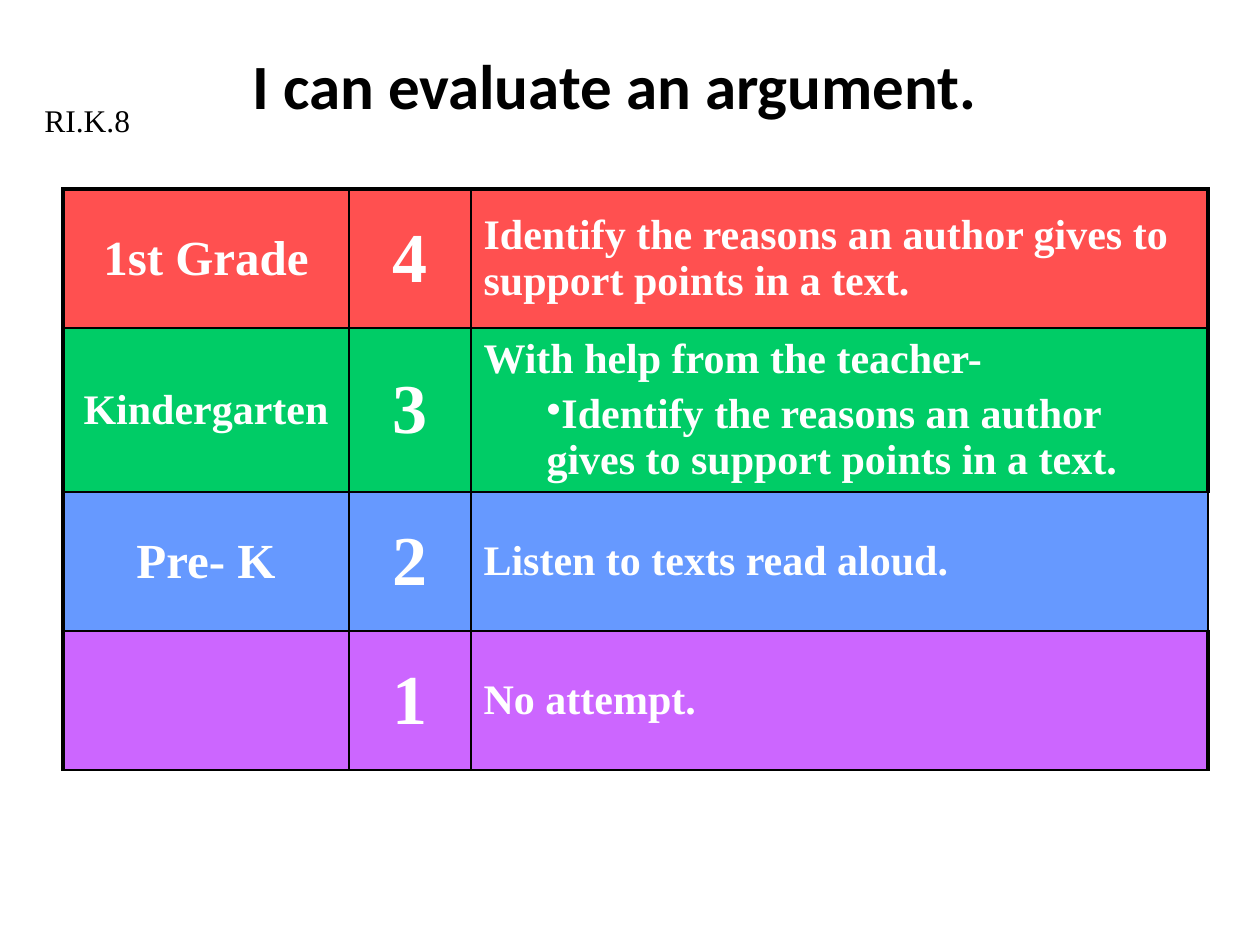
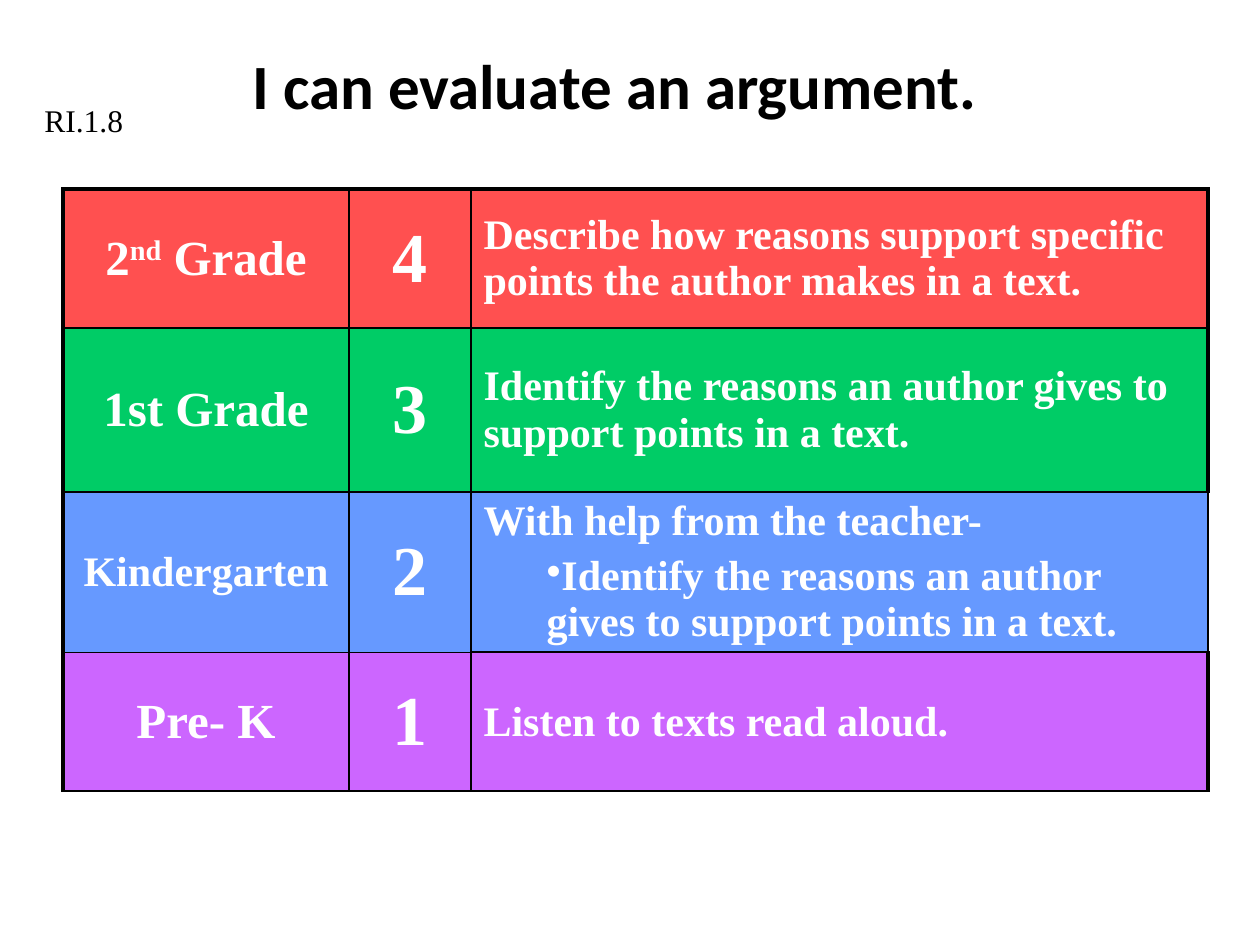
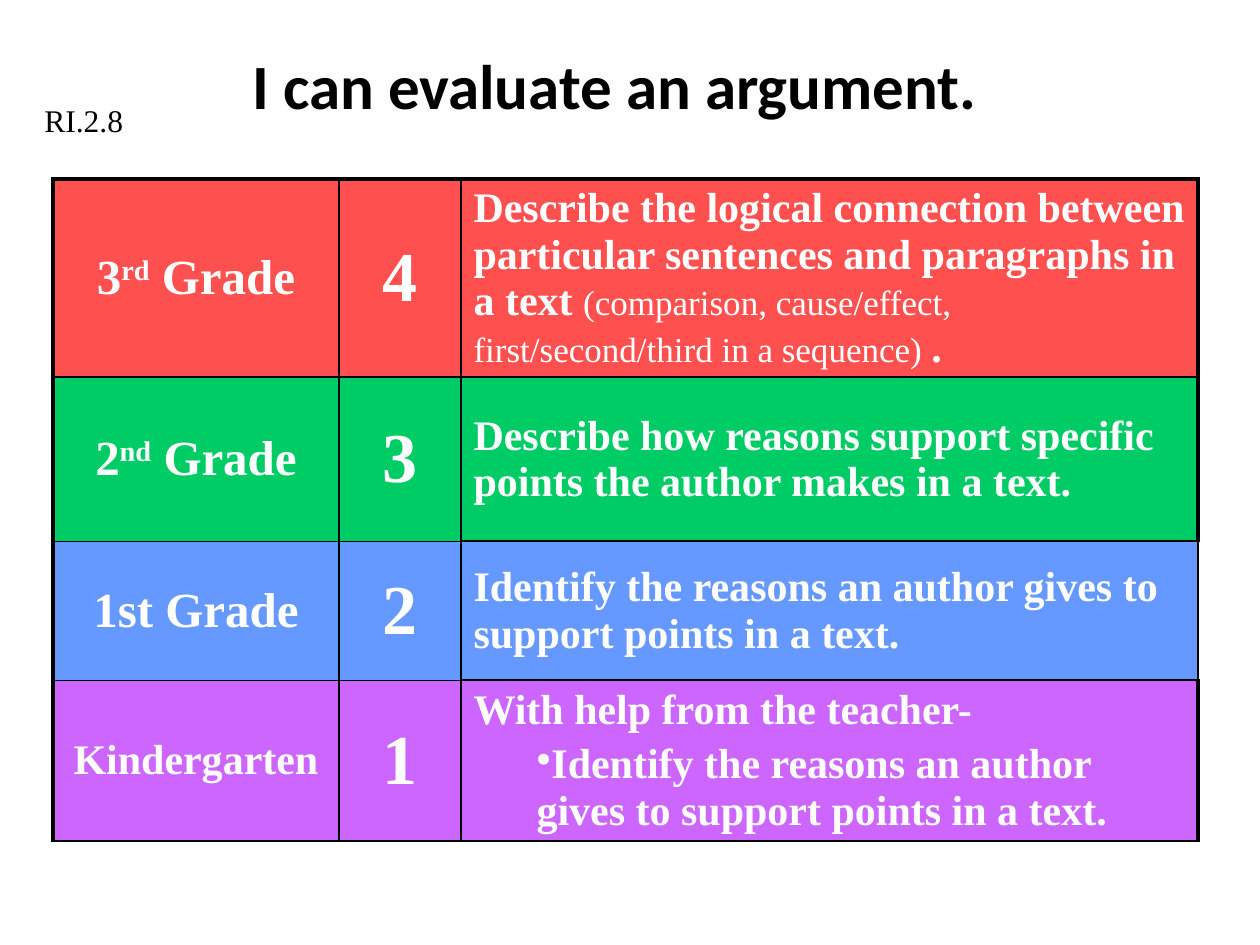
"""Build three kindergarten to second grade rubrics for evaluating an argument."""
from dataclasses import dataclass

from lxml import etree
from pptx import Presentation
from pptx import util as u
from pptx.dml.color import RGBColor
from pptx.enum import text
from pptx.oxml.ns import qn

TITLE = "I can evaluate an argument."

FIRST = [("1st Grade", "grade")]
SECOND = [("2", "grade"), ("nd", "ordinal"), (" Grade", "grade")]
THIRD = [("3", "grade"), ("rd", "ordinal"), (" Grade", "grade")]
KINDER = [("Kindergarten", "skill")]
PRE_K = [("Pre- K", "grade")]

IDENTIFY = "Identify the reasons an author gives to support points in a text."
REASONS = [[(IDENTIFY, "skill")]]
HELPED = [[("With help from the teacher-", "skill")], [(IDENTIFY, "skill")]]
LISTEN = [[("Listen to texts read aloud.", "skill")]]
NO_ATTEMPT = [[("No attempt.", "skill")]]
DESCRIBE = [[("Describe how reasons support specific points the author makes in a text.", "skill")]]
CONNECT = [[
    ("Describe the logical connection between particular sentences and paragraphs in a text ", "skill"),
    ("(comparison, cause/effect, first/second/third in a sequence) ", "aside"),
    (".", "skill"),
]]

RUBRICS = [
    ("RI.K.8", (63, 189), [(FIRST, REASONS), (KINDER, HELPED), (PRE_K, LISTEN), ([], NO_ATTEMPT)]),
    ("RI.1.8", (63, 189), [(SECOND, DESCRIBE), (FIRST, REASONS), (KINDER, HELPED), (PRE_K, LISTEN)]),
    ("RI.2.8", (53, 179), [(THIRD, CONNECT), (SECOND, DESCRIBE), (FIRST, REASONS), (KINDER, HELPED)]),
]

TITLE_BOX = (21, 21, 1187, 126)
STANDARD_BOX = (32, 95, 179, 50)
COLUMNS = (286, 122, 737)
ROWS = (139, 164, 139, 139)
BULLET_INDENT = 63

SIDES = ("lnL", "lnR", "lnT", "lnB")
BORDERS = [
    [(2.25, 1, 2.25, 1.5), (1, 1, 2.25, 1.5), (1, 2.25, 2.25, 1.5)],
    [(2.25, 1, 1.5, 1), (1, 1, 1.5, 1), (1, 2.25, 1.5, 1.5)],
    [(2.25, 1.5, 1, 1), (1.5, 1.5, 1, 1), (1.5, 1.5, 1.5, 1.5)],
    [(2.25, 1, 1, 1.5), (1, 1, 1, 1.5), (1, 2.25, 1.5, 1.5)],
]


@dataclass(frozen=True)
class Theme:
    """Colours, fonts and type sizes."""
    ink: str = "000000"
    paper: str = "FFFFFF"
    bands: tuple = ("FF5050", "00CC66", "6699FF", "CC66FF")
    heading: str = "Calibri"
    serif: str = "Times New Roman"
    title: int = 36
    standard: int = 18
    score: int = 40
    grade: int = 28
    ordinal: int = 28
    skill: int = 24
    aside: int = 20
    bullet_gap: float = 4.8


THEME = Theme()


def px(length):
    """Turn pixels into EMU."""
    return u.Emu(round(length * 914400 / 126))


def style(span, font, size, color, bold):
    """Format one run."""
    span.font.name = font
    span.font.size = u.Pt(size)
    span.font.bold = bold
    span.font.color.rgb = RGBColor.from_string(color)


def write(cell, paragraphs, align):
    """Fill a cell, with every paragraph after the first as a bullet."""
    for index, spans in enumerate(paragraphs):
        para = cell.text_frame.add_paragraph() if index else cell.text_frame.paragraphs[0]
        para.alignment = align
        if index:
            para.level = 1
            para.space_before = u.Pt(THEME.bullet_gap)
            properties = para._p.get_or_add_pPr()
            properties.set("marL", str(px(BULLET_INDENT)))
            properties.set("indent", "0")
            etree.SubElement(properties, qn("a:buChar"), char="•")
        for words, role in spans:
            span = para.add_run()
            span.text = words
            style(span, THEME.serif, getattr(THEME, role), THEME.paper, role != "aside")
            if role == "ordinal":
                span._r.get_or_add_rPr().set("baseline", "30000")


def paint(cell, color, widths):
    """Set the borders, fill and anchor of a cell."""
    properties = cell._tc.get_or_add_tcPr()
    for side, width in zip(SIDES, widths):
        line = etree.SubElement(properties, qn(f"a:{side}"), w=str(u.Pt(width)))
        fill = etree.SubElement(line, qn("a:solidFill"))
        etree.SubElement(fill, qn("a:srgbClr"), val=THEME.ink)
    cell.fill.solid()
    cell.fill.fore_color.rgb = RGBColor.from_string(color)
    cell.vertical_anchor = text.MSO_ANCHOR.MIDDLE


def add_title(page):
    """Place the shared title."""
    box = page.shapes.title
    box.left, box.top, box.width, box.height = map(px, TITLE_BOX)
    frame = box.text_frame
    frame.text = TITLE
    frame.auto_size = text.MSO_AUTO_SIZE.NONE
    frame.vertical_anchor = text.MSO_ANCHOR.MIDDLE
    para = frame.paragraphs[0]
    para.alignment = text.PP_ALIGN.CENTER
    style(para.runs[0], THEME.heading, THEME.title, THEME.ink, True)


def add_rubric(page, corner, levels):
    """Draw the table of grades, scores and skills."""
    size = (sum(COLUMNS), sum(ROWS))
    table = page.shapes.add_table(len(ROWS), len(COLUMNS), *map(px, corner + size)).table
    table.first_row = table.horz_banding = False
    for column, width in zip(table.columns, COLUMNS):
        column.width = px(width)
    center, left = text.PP_ALIGN.CENTER, text.PP_ALIGN.LEFT
    for index, (grade, skill) in enumerate(levels):
        table.rows[index].height = px(ROWS[index])
        score = [(str(len(levels) - index), "score")]
        contents = (([grade], center), ([score], center), (skill, left))
        for column, (paragraphs, align) in enumerate(contents):
            cell = table.cell(index, column)
            write(cell, paragraphs, align)
            paint(cell, THEME.bands[index], BORDERS[index][column])


def add_standard(page, code):
    """Place the code of the learning standard."""
    frame = page.shapes.add_textbox(*map(px, STANDARD_BOX)).text_frame
    frame.word_wrap = True
    frame.auto_size = text.MSO_AUTO_SIZE.SHAPE_TO_FIT_TEXT
    frame.text = code
    style(frame.paragraphs[0].runs[0], THEME.serif, THEME.standard, THEME.ink, False)


def main():
    """Build and save the deck."""
    deck = Presentation()
    deck.slide_width, deck.slide_height = px(1260), px(945)
    for code, corner, levels in RUBRICS:
        page = deck.slides.add_slide(deck.slide_layouts[5])
        add_title(page)
        add_rubric(page, corner, levels)
        add_standard(page, code)
    deck.save("out.pptx")


if __name__ == "__main__":
    main()
